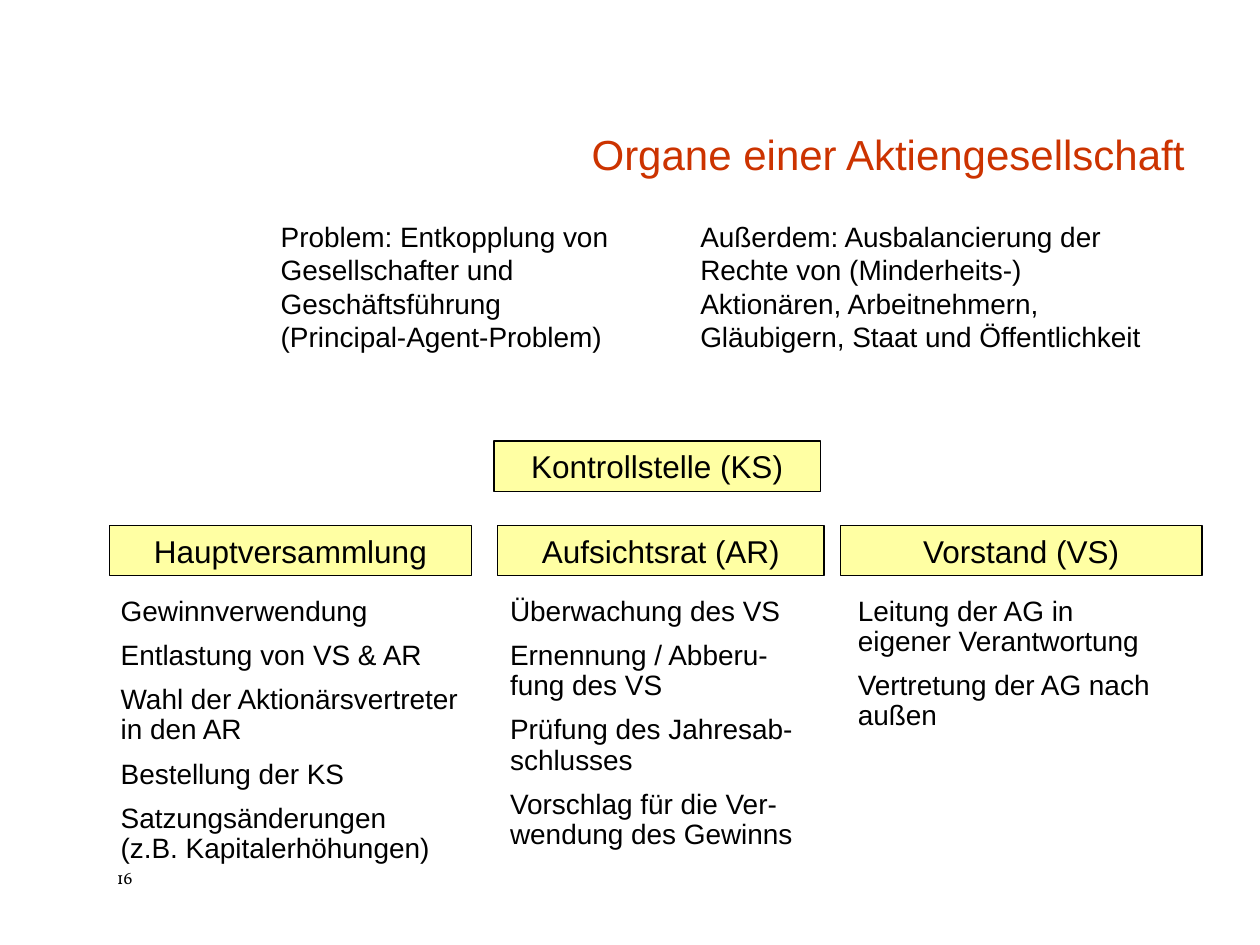
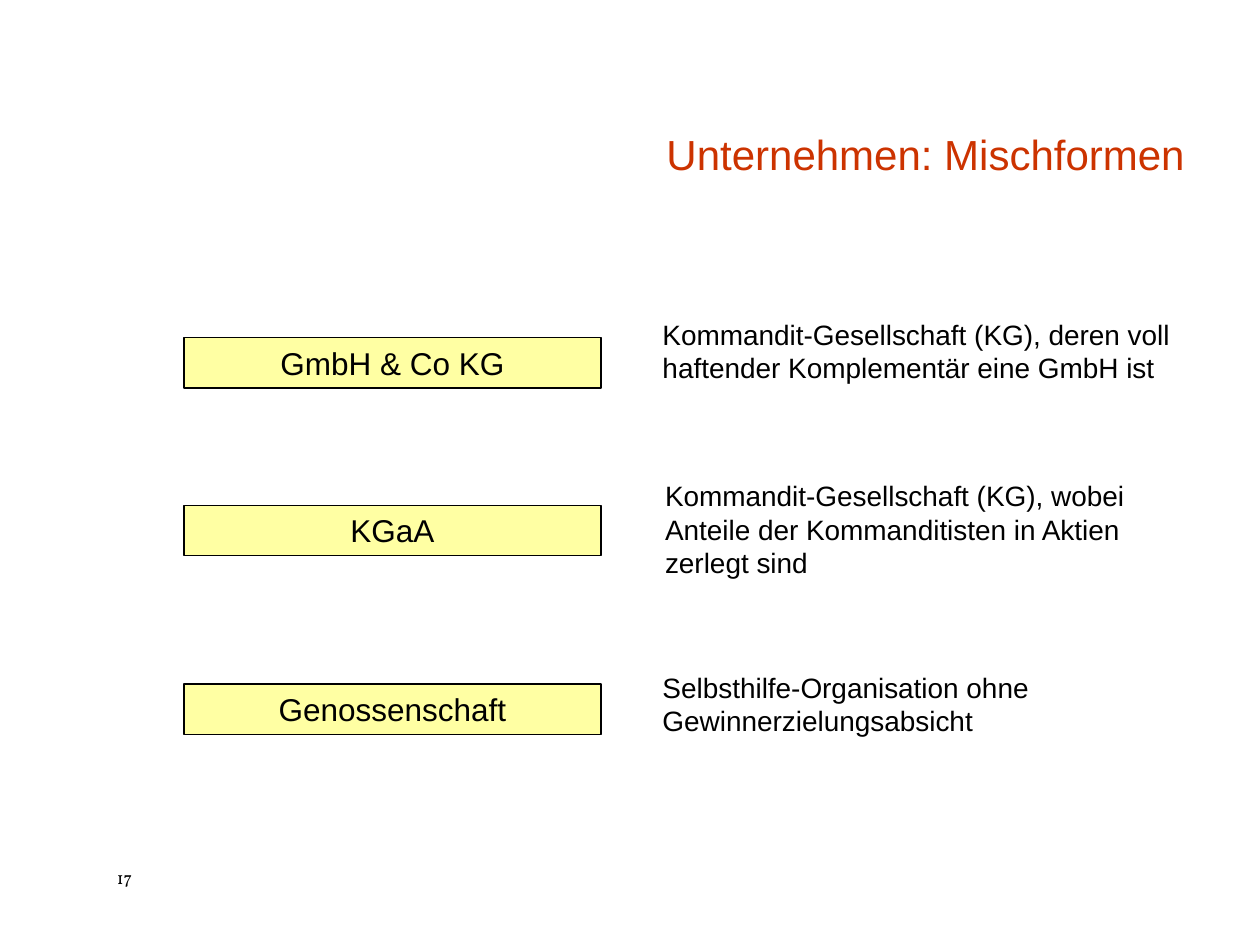
from dataclasses import dataclass
from pptx import Presentation
from pptx.dml.color import RGBColor
from pptx.enum.shapes import MSO_SHAPE
from pptx.enum.text import MSO_ANCHOR, PP_ALIGN
from pptx.util import Inches, Pt

COLS, ROWS = 100, 75


@dataclass(frozen=True)
class Theme:
    ink: RGBColor = RGBColor(0x00, 0x00, 0x00)
    accent: RGBColor = RGBColor(0xCC, 0x33, 0x00)
    bar: RGBColor = RGBColor(0xFF, 0xFF, 0xA3)
    font: str = "Arial"
    number_font: str = "Vollkorn"
    title_size: int = 24
    bar_size: int = 18
    body_size: int = 16
    number_size: int = 10
    outline: float = 0.75
    tight: float = 0.9


THEME = Theme()
TITLE = {"size": THEME.title_size, "color": THEME.accent, "align": PP_ALIGN.RIGHT,
         "anchor": MSO_ANCHOR.BOTTOM, "leading": THEME.tight}
BAR = {"size": THEME.bar_size, "align": PP_ALIGN.CENTER, "anchor": MSO_ANCHOR.MIDDLE}
BODY = {"size": THEME.body_size}
DUTIES = {**BODY, "leading": THEME.tight}
NUMBER = {"size": THEME.number_size, "font": THEME.number_font}

BAR_HEIGHT = 4

INTRO = [
    (0, 28.3, "Problem: Entkopplung von Gesellschafter und Geschäftsführung\v(Principal-Agent-Problem)"),
    (33.3, 37, "Außerdem: Ausbalancierung der Rechte von (Minderheits-) Aktionären, "
               "Arbeitnehmern, Gläubigern, Staat und Öffentlichkeit"),
]
ORGANS = [
    ("Hauptversammlung", 0, 28.7, -0.1, 29.7,
     ["Gewinnverwendung", "Entlastung von VS & AR",
      "Wahl der Aktionärsvertreter in den AR", "Bestellung der KS",
      "Satzungsänderungen\v(z.B. Kapitalerhöhungen)"]),
    ("Aufsichtsrat (AR)", 30.8, 25.9, 0, 25.9,
     ["Überwachung des VS", "Ernennung / Abberu-fung des VS",
      "Prüfung des Jahresab-schlusses", "Vorschlag für die Ver-wendung des Gewinns"]),
    ("Vorstand (VS)", 58, 28.7, 0.4, 25.9,
     ["Leitung der AG in eigener Verantwortung", "Vertretung der AG nach außen"]),
]
MIXED_FORMS = [
    ("GmbH & Co KG", 2.1, 37, 0,
     "Kommandit-Gesellschaft (KG), deren voll haftender Komplementär eine GmbH ist"),
    ("KGaA", 15.4, 37.2, 12.8,
     "Kommandit-Gesellschaft (KG), wobei Anteile der Kommanditisten in Aktien zerlegt sind"),
    ("Genossenschaft", 29.6, 37, 28,
     "Selbsthilfe-Organisation ohne Gewinnerzielungsabsicht"),
]


@dataclass(frozen=True)
class Box:
    left: float
    top: float
    width: float
    height: float

    def inner(self, left, top, width, height):
        return Box(self.left + left, self.top + top, width, height)

    def emu(self, prs):
        col, row = prs.slide_width / COLS, prs.slide_height / ROWS
        return [round(n * unit) for n, unit in
                ((self.left, col), (self.top, row), (self.width, col), (self.height, row))]


def apply(target, values):
    for name, value in values.items():
        setattr(target, name, value)


def write(tf, texts, style):
    apply(tf, {"word_wrap": True, "vertical_anchor": style.get("anchor", MSO_ANCHOR.TOP)})
    for i, text in enumerate(texts):
        p = tf.paragraphs[0] if i == 0 else tf.add_paragraph()
        p.text = text
        apply(p, {"alignment": style.get("align", PP_ALIGN.LEFT),
                  "line_spacing": style.get("leading", 1.0),
                  "space_before": Pt(style["size"] / 2 if i else 0)})
        for r in p.runs:
            apply(r.font, {"name": style.get("font", THEME.font), "size": Pt(style["size"])})
            r.font.color.rgb = style.get("color", THEME.ink)


def add_text(prs, s, box, texts, style):
    sp = s.shapes.add_textbox(*box.emu(prs))
    write(sp.text_frame, texts, style)


def add_bar(prs, s, box, label):
    sp = s.shapes.add_shape(MSO_SHAPE.RECTANGLE, *box.emu(prs))
    sp.shadow.inherit = False
    sp.fill.solid()
    sp.fill.fore_color.rgb = THEME.bar
    sp.line.color.rgb = THEME.ink
    sp.line.width = Pt(THEME.outline)
    write(sp.text_frame, [label], BAR)


def start_slide(prs, title, number):
    s = prs.slides.add_slide(prs.slide_layouts[6])
    add_text(prs, s, Box(8.3, 68.3, 6.7, 2.7), [str(number)], NUMBER)
    add_text(prs, s, Box(20.9, 4.2, 74.1, 10.5), [title], TITLE)
    return s


def intro_region(prs, s, box):
    for left, width, text in INTRO:
        add_text(prs, s, box.inner(left, 0, width, box.height), [text], BODY)


def organs_region(prs, s, box):
    bar_top, duties_top = 6.7, 11.9
    add_bar(prs, s, box.inner(30.5, 0, 25.9, BAR_HEIGHT), "Kontrollstelle (KS)")
    for label, left, width, shift, text_width, duties in ORGANS:
        add_bar(prs, s, box.inner(left, bar_top, width, BAR_HEIGHT), label)
        add_text(prs, s, box.inner(left + shift, duties_top, text_width, box.height - duties_top),
                 duties, DUTIES)


def mixed_forms_region(prs, s, box):
    for label, bar_top, text_left, text_top, text in MIXED_FORMS:
        add_bar(prs, s, box.inner(0, bar_top, 33.1, BAR_HEIGHT), label)
        add_text(prs, s, box.inner(text_left, text_top, 43.3, 6.5), [text], BODY)


def main():
    prs = Presentation()
    prs.slide_width, prs.slide_height = Inches(10), Inches(7.5)
    s = start_slide(prs, "Organe einer Aktiengesellschaft", 16)
    intro_region(prs, s, Box(21.3, 16.9, 70.3, 11.8))
    organs_region(prs, s, Box(8.7, 35, 86.7, 35.3))
    s = start_slide(prs, "Unternehmen: Mischformen", 17)
    mixed_forms_region(prs, s, Box(14.6, 24.7, 80.5, 34.5))
    prs.save("out.pptx")


if __name__ == "__main__":
    main()
